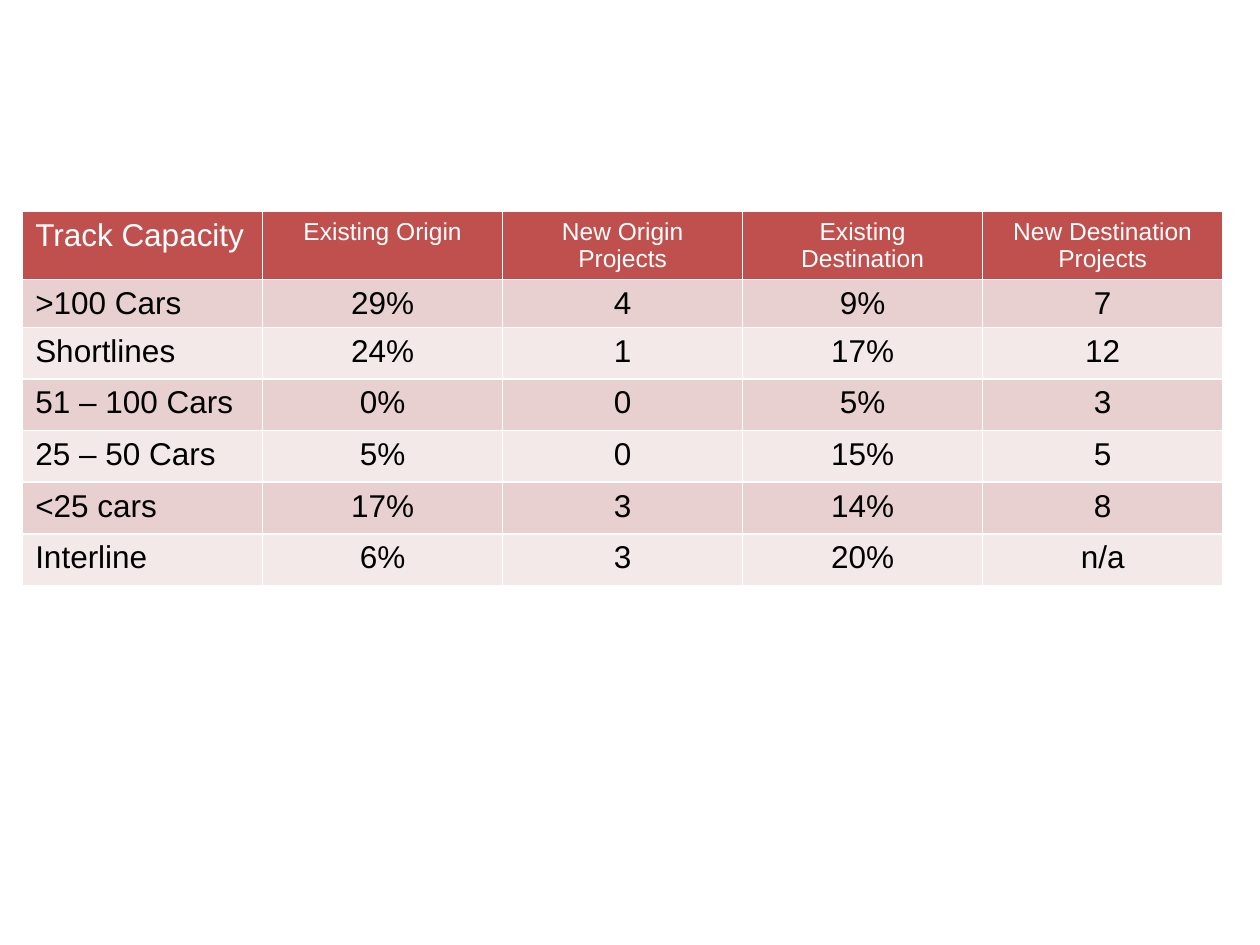
from dataclasses import dataclass

from lxml import etree
from pptx import Presentation
from pptx.dml.color import RGBColor
from pptx.enum import text
from pptx.oxml import ns
from pptx.util import Inches, Pt


@dataclass(frozen=True)
class Theme:
    font: str = "Arial"
    body_size: int = 18
    heading_size: int = 14
    header_fill: str = "C0504D"
    header_text: str = "FFFFFF"
    body_text: str = "000000"
    bands: tuple = ("E8D0D0", "F4E9E9")
    border: str = "FFFFFF"
    border_width: int = 1


THEME = Theme()

ROWS = [
    ("Track Capacity", "Existing Origin", "New Origin Projects",
     "Existing Destination", "New Destination Projects"),
    (">100 Cars", "29%", "4", "9%", "7"),
    ("Shortlines", "24%", "1", "17%", "12"),
    ("51 – 100 Cars", "0%", "0", "5%", "3"),
    ("25 – 50 Cars", "5%", "0", "15%", "5"),
    ("<25 cars", "17%", "3", "14%", "8"),
    ("Interline", "6%", "3", "20%", "n/a"),
]
COLUMN_WIDTH = 1.905
ROW_HEIGHTS = [0.41, 0.38] + [0.41] * 5


def add_borders(cell):
    properties = cell._tc.get_or_add_tcPr()
    for index, side in enumerate(("lnL", "lnR", "lnT", "lnB")):
        line = etree.Element(ns.qn(f"a:{side}"), w=str(Pt(THEME.border_width)))
        fill = etree.SubElement(line, ns.qn("a:solidFill"))
        etree.SubElement(fill, ns.qn("a:srgbClr"), val=THEME.border)
        properties.insert(index, line)


def fill_cell(cell, content, row, column):
    is_header = row == 0
    fill = THEME.header_fill if is_header else THEME.bands[(row - 1) % 2]
    cell.fill.solid()
    cell.fill.fore_color.rgb = RGBColor.from_string(fill)
    add_borders(cell)

    cell.text = content
    paragraph = cell.text_frame.paragraphs[0]
    paragraph.alignment = text.PP_ALIGN.CENTER if column else text.PP_ALIGN.LEFT
    font = paragraph.font
    font.name = THEME.font
    font.size = Pt(THEME.heading_size if is_header and column else THEME.body_size)
    font.bold = False
    font.color.rgb = RGBColor.from_string(
        THEME.header_text if is_header else THEME.body_text)


def add_capacity_table(slide):
    column_count = len(ROWS[0])
    table = slide.shapes.add_table(
        len(ROWS), column_count, Inches(0.18), Inches(1.68),
        Inches(COLUMN_WIDTH * column_count), Inches(sum(ROW_HEIGHTS))).table
    for column in table.columns:
        column.width = Inches(COLUMN_WIDTH)
    for table_row, height in zip(table.rows, ROW_HEIGHTS):
        table_row.height = Inches(height)
    for row, contents in enumerate(ROWS):
        for column, content in enumerate(contents):
            fill_cell(table.cell(row, column), content, row, column)


def main():
    presentation = Presentation()
    presentation.slide_width = Inches(10)
    presentation.slide_height = Inches(7.5)
    slide = presentation.slides.add_slide(presentation.slide_layouts[6])
    add_capacity_table(slide)
    presentation.save("out.pptx")


if __name__ == "__main__":
    main()
